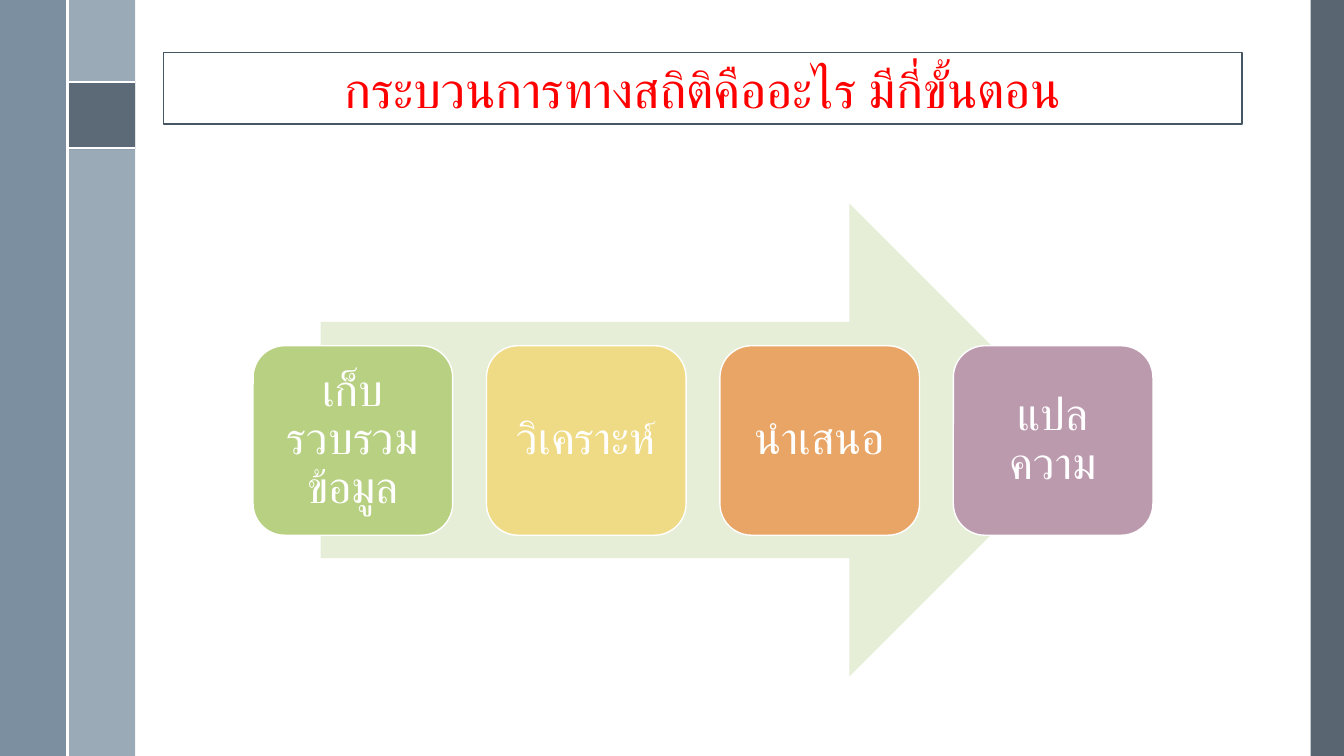
"""Build a slide showing the four steps of the statistical process in Thai."""
from lxml.etree import SubElement
from pptx import Presentation
from pptx.dml.color import RGBColor
from pptx.enum.lang import MSO_LANGUAGE_ID
from pptx.enum.shapes import MSO_CONNECTOR, MSO_SHAPE
from pptx.enum.text import MSO_ANCHOR, PP_ALIGN
from pptx.oxml.ns import qn
from pptx.util import Inches, Pt

COLORS = {
    "white": "FFFFFF", "red": "FF0000", "slate": "475562", "steel": "6A8093",
    "mist": "9BAAB7", "frame": "465562", "pale": "E6EED8", "green": "B8D082",
    "yellow": "EFDB85", "orange": "E8A565", "mauve": "BC9AAE",
}
PI_OUTLINE = [
    (1.18, 0.98), (0.9, 0.98), (0.87, 0.99), (0.84, 1.02), (0.83, 1.04),
    (0.84, 1.05), (0.85, 1.05), (0.87, 1.02), (0.9, 1.01), (0.94, 1.01),
    (0.93, 1.12), (0.91, 1.22), (0.88, 1.27), (0.88, 1.29), (0.9, 1.29),
    (0.93, 1.24), (0.95, 1.15), (0.97, 1.01), (1.06, 1.01), (1.05, 1.22),
    (1.05, 1.26), (1.07, 1.29), (1.1, 1.3), (1.12, 1.3), (1.16, 1.28),
    (1.19, 1.22), (1.18, 1.21), (1.16, 1.22), (1.14, 1.26), (1.11, 1.28),
    (1.08, 1.27), (1.07, 1.22), (1.09, 1.01), (1.18, 1.01), (1.19, 1),
]
STEPS = [
    ("เก็บรวบรวมข้อมูล", "green"), ("วิเคราะห์", "yellow"),
    ("นำเสนอ", "orange"), ("แปลความ", "mauve"),
]


def write_text(shape, text, size, color, font, anchor, inset):
    frame = shape.text_frame
    frame.word_wrap = True
    frame.vertical_anchor = anchor
    frame.margin_left = frame.margin_right = Inches(inset)
    frame.margin_top = frame.margin_bottom = Inches(min(inset, 0.22))
    paragraph = frame.paragraphs[0]
    paragraph.alignment = PP_ALIGN.CENTER
    paragraph.line_spacing = 0.9
    run = paragraph.add_run()
    run.text = text
    run.font.name = font
    run.font.size = Pt(size)
    run.font.color.rgb = RGBColor.from_string(COLORS[color])
    run.font.language_id = MSO_LANGUAGE_ID.THAI
    SubElement(run.font._element, qn("a:cs"), typeface=font)


class SlideBuilder:
    def __init__(self, slide, font="Roboto"):
        self.slide = slide
        self.font = font

    def paint(self, shape, fill, line=None, opacity=100):
        shape.shadow.inherit = False
        shape.fill.solid()
        shape.fill.fore_color.rgb = RGBColor.from_string(COLORS[fill])
        if opacity < 100:
            color = shape.fill._xPr.find(qn("a:solidFill"))[0]
            SubElement(color, qn("a:alpha"), val=str(opacity * 1000))
        if line:
            shape.line.color.rgb = RGBColor.from_string(COLORS[line])
            shape.line.width = Pt(1)
        else:
            shape.line.fill.background()

    def block(self, kind, box, fill, line=None, opacity=100):
        shape = self.slide.shapes.add_shape(kind, *map(Inches, box))
        self.paint(shape, fill, line, opacity)
        return shape

    def rule(self, *ends):
        line = self.slide.shapes.add_connector(
            MSO_CONNECTOR.STRAIGHT, *map(Inches, ends))
        line.line.color.rgb = RGBColor.from_string(COLORS["white"])
        line.line.width = Pt(1.5)
        SubElement(line._element.spPr, qn("a:effectLst"))

    def outline(self, points, fill):
        builder = self.slide.shapes.build_freeform(
            *points[0], scale=Inches(1))
        builder.add_line_segments(points[1:], close=True)
        self.paint(builder.convert_to_shape(), fill)

    def text(self, shape, text, size, color, anchor=MSO_ANCHOR.MIDDLE, inset=0.1):
        write_text(shape, text, size=size, color=color, font=self.font,
                   anchor=anchor, inset=inset)


def main():
    presentation = Presentation()
    presentation.slide_width = Inches(13.33)
    presentation.slide_height = Inches(7.5)
    page = SlideBuilder(
        presentation.slides.add_slide(presentation.slide_layouts[6]))

    for box, fill, opacity in [
        ((13, 0, 0.33, 7.5), "slate", 90),
        ((0.67, 0, 0.67, 7.5), "mist", 100),
        ((0, 0, 0.67, 7.5), "steel", 88),
        ((0.67, 0.81, 0.67, 0.67), "slate", 75),
    ]:
        page.block(MSO_SHAPE.RECTANGLE, box, fill, opacity=opacity)
    for y in (0.81, 1.47):
        page.rule(0.67, y, 1.34, y)
    page.outline(PI_OUTLINE, "white")
    page.rule(0.67, 0, 0.67, 7.5)

    title = page.block(
        MSO_SHAPE.RECTANGLE, (1.62, 0.52, 10.7, 0.71), "white", "frame")
    page.text(title, "กระบวนการทางสถิติคืออะไร มีกี่ขั้นตอน", 36, "red",
              anchor=MSO_ANCHOR.BOTTOM, inset=0.05)

    page.block(MSO_SHAPE.RIGHT_ARROW, (3.18, 2.02, 7.59, 4.69), "pale")
    for index, (label, fill) in enumerate(STEPS):
        left = 2.51 + index * 2.315
        step = page.block(MSO_SHAPE.ROUNDED_RECTANGLE,
                          (left, 3.43, 1.98, 1.88), fill, "white")
        page.text(step, label, 32, "white", inset=0.13)

    presentation.save("out.pptx")


if __name__ == "__main__":
    main()
